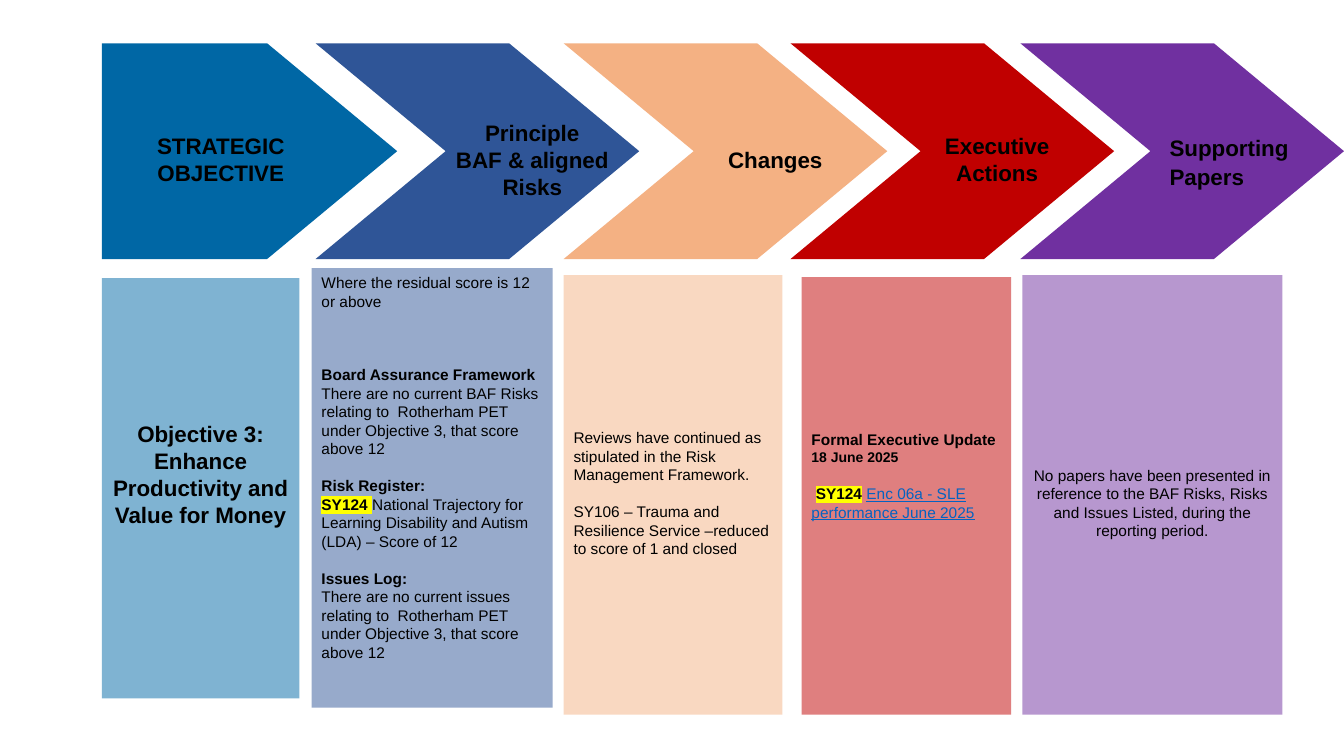
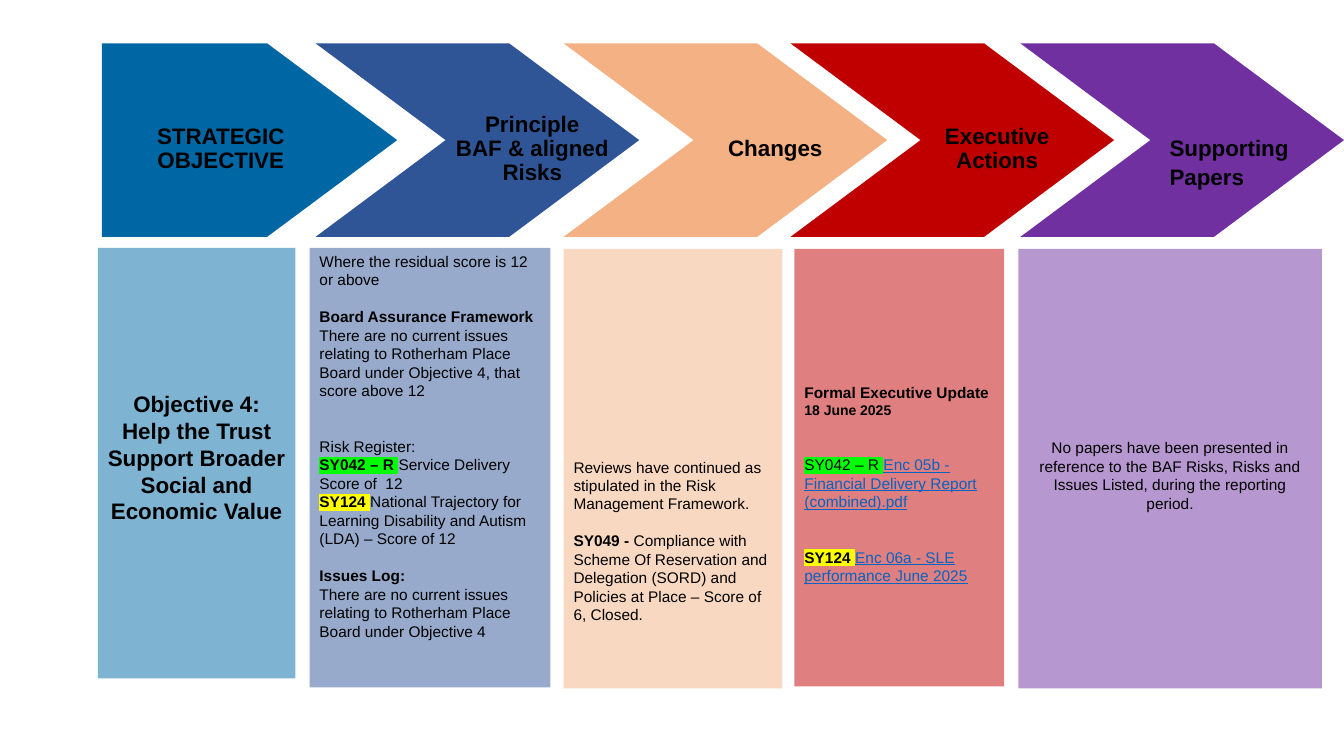
from lxml import etree
from pptx import Presentation
from pptx.dml.color import RGBColor
from pptx.enum import shapes, text
from pptx.oxml.ns import qn
from pptx.util import Inches, Pt

# Shared look
FONT = "Arial"
BLACK = RGBColor(0x00, 0x00, 0x00)
LINK = RGBColor(0x05, 0x63, 0xC1)
YELLOW, GREEN = "FFFF00", "00FF00"
ARROWS = [RGBColor.from_string(c) for c in ("0067A5", "2F5597", "F4B183", "C00000", "7030A0")]
PANELS = [RGBColor.from_string(c) for c in ("7FB3D2", "97AACB", "F9D8C1", "DF7F7F", "B797CF")]
LEFT, CENTER = text.PP_ALIGN.LEFT, text.PP_ALIGN.CENTER
LINE = 13.2  # one line of panel text, in points
TIP = 1.29   # length of an arrow's point, in inches
SIDE = 0.08  # side margin of the objective panel, in inches

# Header arrows: left, width
BANDS = [(1.01, 2.93), (3.13, 3.21), (5.59, 3.21), (7.84, 3.21), (10.12, 3.21)]
# Header labels: text, left, width, alignment
HEADS = [
    ("STRATEGIC\vOBJECTIVE", 1.29, 1.8, CENTER),
    ("Principle\vBAF & aligned\vRisks", 4.38, 1.8, CENTER),
    ("Changes", 6.79, 1.8, CENTER),
    ("Executive\vActions", 8.99, 1.8, CENTER),
    ("Supporting\vPapers", 11.6, 1.3, LEFT),
]

# Runs are (text, format); a paragraph is (blank lines above, runs)
BOLD = dict(bold=True)
URL = dict(color=LINK, under=True)
SCORE = (0, [("Where the residual score is 12 or above", {})])
BOARD = (1, [("Board Assurance Framework", BOLD)])
ISSUES = (1, [("Issues Log:", BOLD)])
LDA = (0, [("SY124 ", dict(bold=True, mark=YELLOW)),
           ("National Trajectory for Learning Disability and Autism (LDA) – Score of 12", {})])
REVIEW = (0, [("Reviews have continued as stipulated in the Risk Management Framework.", {})])
UPDATE = (0, [("Formal Executive Update ", BOLD), ("18 June 2025", dict(bold=True, size=10))])
PAPERS = (0, [("No papers have been presented in reference to the BAF Risks, Risks and "
               "Issues Listed, during the reporting period.", {})])
REPORT = ("Enc 06a - SLE performance June 2025", URL)
PET = ("There are no current {} relating to  Rotherham PET under Objective 3, "
       "that score above 12")
PLACE = "There are no current issues relating to Rotherham Place Board under Objective 4"


def goal(words):
    return [(0, [(words, dict(bold=True, size=16))])]


# Panels: left, top, width, height, top of text, paragraphs
SLIDES = [
    dict(high=2.14, mid=1.58, pitch=19.2, panels=[
        (1.01, 2.76, 1.96, 4.17, 4.17,
         goal("Objective 3:\vEnhance Productivity and Value for Money")),
        (3.09, 2.66, 2.39, 4.36, 2.71, [
            SCORE, (3, BOARD[1]),
            (0, [(PET.format("BAF Risks"), {})]),
            (1, [("Risk Register:", BOLD)]), LDA, ISSUES,
            (0, [(PET.format("issues"), {})])]),
        (5.59, 2.73, 2.17, 4.36, 4.25, [
            REVIEW,
            (1, [("SY106 – Trauma and Resilience Service –reduced to score of 1 and closed", {})])]),
        (7.95, 2.75, 2.08, 4.34, 4.27, [
            UPDATE,
            (1, [(" ", {}), ("SY124", dict(bold=True, mark=YELLOW)), (" ", {}), REPORT])]),
        (10.14, 2.73, 2.58, 4.36, 4.62, [PAPERS]),
    ]),
    dict(high=1.92, mid=1.48, pitch=17, panels=[
        (0.97, 2.46, 1.96, 4.27, 3.87,
         goal("Objective 4:\vHelp the Trust Support Broader Social and Economic Value")),
        (3.07, 2.46, 2.39, 4.36, 2.5, [
            SCORE, BOARD,
            (0, [(PLACE + ", that score above 12", {})]),
            (2, [("Risk Register:", {})]),
            (0, [("SY042 – R ", dict(bold=True, mark=GREEN)),
                 ("Service Delivery Score of  12", {})]),
            LDA, ISSUES, (0, [(PLACE, {})])]),
        (5.59, 2.47, 2.17, 4.36, 4.54, [
            REVIEW,
            (1, [("SY049 - ", BOLD),
                 ("Compliance with Scheme Of Reservation and Delegation (SORD) and "
                  "Policies at Place – Score of 6, Closed.", {})])]),
        (7.88, 2.47, 2.08, 4.34, 3.8, [
            UPDATE,
            (2, [("SY042 – R ", dict(mark=GREEN)),
                 ("Enc 05b - Financial Delivery Report (combined).pdf", URL)]),
            (2, [("SY124 ", dict(bold=True, mark=YELLOW)), REPORT])]),
        (10.1, 2.47, 3.01, 4.36, 4.35, [PAPERS]),
    ]),
]


def write(para, words, size=11, bold=False, color=BLACK, under=False, mark=None):
    """Add text to a paragraph; a vertical tab breaks the line."""
    for i, part in enumerate(words.split("\v")):
        if i:
            para.add_line_break()
        run = para.add_run()
        run.text = part
        font = run.font
        font.name, font.size, font.bold = FONT, Pt(size), bold
        font.underline = under
        font.color.rgb = color
        if mark:
            glow = etree.Element(qn("a:highlight"))
            etree.SubElement(glow, qn("a:srgbClr"), val=mark)
            font._element.find(qn("a:solidFill")).addnext(glow)


def paint(shape, color):
    shape.fill.solid()
    shape.fill.fore_color.rgb = color
    shape.line.fill.background()


def add_arrow(slide, kind, left, width, high, color):
    box = slide.shapes.add_shape(kind, Inches(left), Inches(0.43), Inches(width), Inches(high))
    box.adjustments[0] = TIP / min(width, high)
    box.shadow.inherit = False
    paint(box, color)


def add_head(slide, words, left, width, align, mid, pitch):
    tall = 1
    box = slide.shapes.add_textbox(Inches(left), Inches(mid - tall / 2), Inches(width), Inches(tall))
    frame = box.text_frame
    frame.word_wrap = True
    frame.vertical_anchor = text.MSO_ANCHOR.MIDDLE
    frame.margin_left = frame.margin_right = frame.margin_top = frame.margin_bottom = 0
    para = frame.paragraphs[0]
    para.alignment, para.line_spacing = align, Pt(pitch)
    write(para, words, size=16, bold=True)


def fill_panel(box, color, spot, start, paras, align):
    box.left, box.top, box.width, box.height = map(Inches, spot)
    paint(box, color)
    frame = box.text_frame
    frame.word_wrap = True
    frame.auto_size = text.MSO_AUTO_SIZE.NONE
    frame.vertical_anchor = text.MSO_ANCHOR.TOP
    frame.margin_top = Inches(start - spot[1])
    for i, (gap, runs) in enumerate(paras):
        para = frame.add_paragraph() if i else frame.paragraphs[0]
        para.alignment, para.space_before = align, Pt(gap * LINE)
        for words, style in runs:
            write(para, words, **style)


def build(deck, data):
    slide = deck.slides.add_slide(deck.slide_layouts[5])
    # Header arrows and labels
    for i, (left, width) in enumerate(BANDS):
        kind = shapes.MSO_SHAPE.CHEVRON if i else shapes.MSO_SHAPE.PENTAGON
        add_arrow(slide, kind, left, width, data["high"], ARROWS[i])
    for i, head in enumerate(HEADS):
        last = i == len(HEADS) - 1
        add_head(slide, *head, 1.6 if last else data["mid"], 20.6 if last else data["pitch"])
    # Panels; the objective is the slide title
    for i, (*spot, start, paras) in enumerate(data["panels"]):
        if i:
            box = slide.shapes.add_shape(shapes.MSO_SHAPE.RECTANGLE, *map(Inches, spot))
            box.shadow.inherit = False
        else:
            box = slide.shapes.title
            box.text_frame.margin_left = box.text_frame.margin_right = Inches(SIDE)
        align = CENTER if i in (0, 4) else LEFT
        fill_panel(box, PANELS[i], spot, start, paras, align)


def main():
    deck = Presentation()
    deck.slide_width, deck.slide_height = Inches(13.33), Inches(7.5)
    for data in SLIDES:
        build(deck, data)
    deck.save("out.pptx")


if __name__ == "__main__":
    main()
